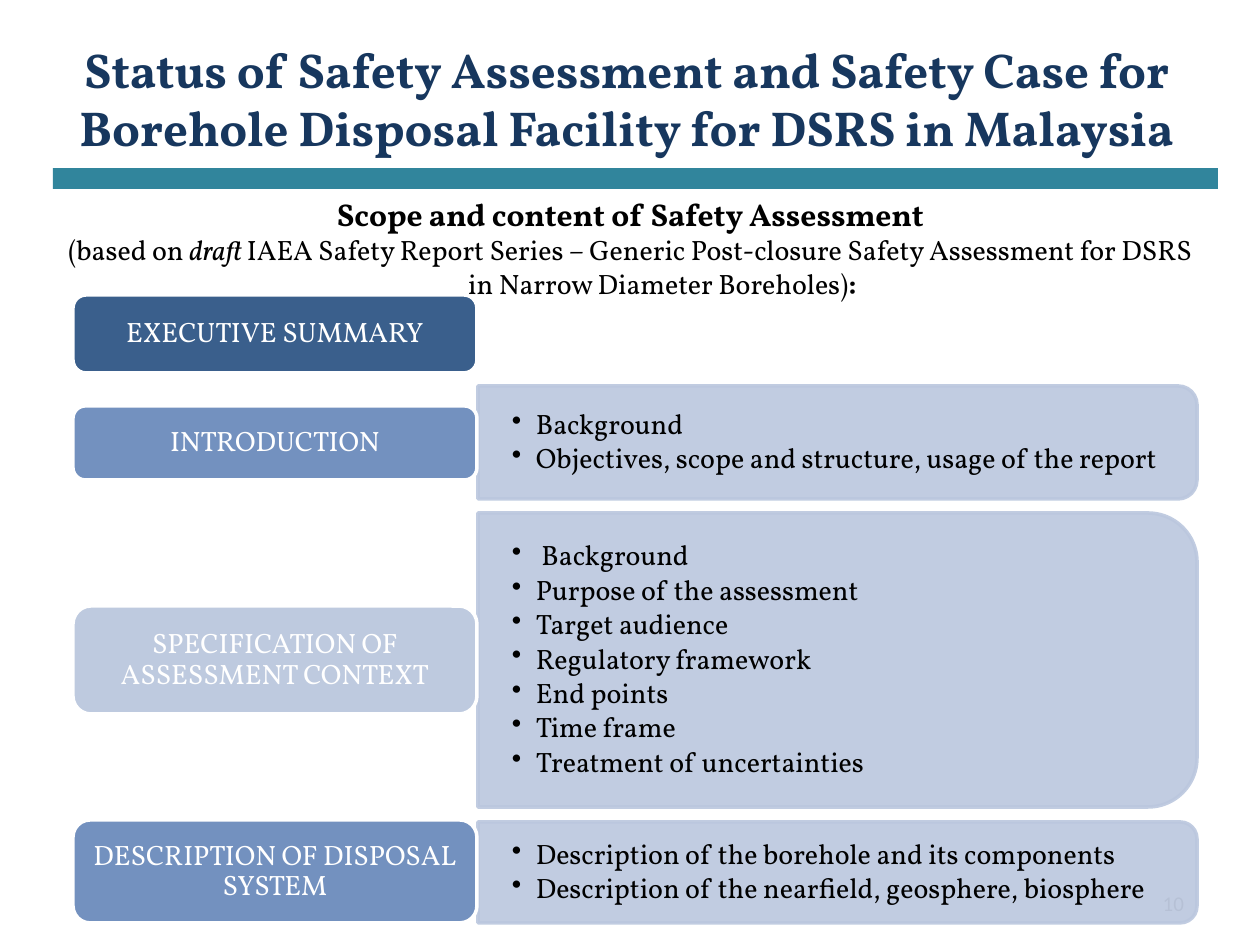
from lxml.etree import SubElement
from pptx import Presentation
from pptx.dml.color import RGBColor
from pptx.enum.shapes import MSO_SHAPE as Shape
from pptx.enum.text import MSO_ANCHOR as Anchor, MSO_AUTO_SIZE as AutoSize, PP_ALIGN as Align
from pptx.oxml.ns import qn
from pptx.util import Pt

EMU_PER_PX = 914400 / 126
FONT = "Vollkorn"

NAVY = RGBColor(0x17, 0x37, 0x5E)
TEAL = RGBColor(0x31, 0x85, 0x9C)
BLACK = RGBColor(0x00, 0x00, 0x00)
WHITE = RGBColor(0xFF, 0xFF, 0xFF)
GREY = RGBColor(0x89, 0x89, 0x89)
DARK_BLUE = RGBColor(0x3A, 0x5F, 0x8C)
MID_BLUE = RGBColor(0x73, 0x91, 0xBF)
PALE_BLUE = RGBColor(0xBE, 0xCA, 0xDF)
PANEL_BLUE = RGBColor(0xBB, 0xC7, 0xDE)

LABEL_LEFT, LABEL_WIDTH = 73, 404
PANEL_LEFT, PANEL_WIDTH = 478, 719

# Label, colour, (label top, height), (panel top, height), bullets
SECTIONS = [
    ("EXECUTIVE SUMMARY", DARK_BLUE, (295, 78), None, []),
    ("INTRODUCTION", MID_BLUE, (406, 74), (386, 113), [
        "Background",
        "Objectives, scope and structure, usage of the report",
    ]),
    ("SPECIFICATION OF ASSESSMENT CONTEXT", PALE_BLUE, (606, 108), (513, 294), [
        " Background",
        "Purpose of the assessment",
        "Target audience",
        "Regulatory framework",
        "End points",
        "Time frame",
        "Treatment of uncertainties",
    ]),
    ("DESCRIPTION OF DISPOSAL SYSTEM", MID_BLUE, (820, 103), (822, 101), [
        "Description of the borehole and its components",
        "Description of the nearfield, geosphere, biosphere",
    ]),
]


def px(length):
    return round(length * EMU_PER_PX)


def place(box, left, top, width, height):
    box.left, box.top, box.width, box.height = map(px, (left, top, width, height))


def add_span(para, text, size, color, bold=False, italic=False, font=FONT):
    span = para.add_run()
    span.text = text
    span.font.size = Pt(size)
    span.font.color.rgb = color
    span.font.bold = bold
    span.font.italic = italic
    if font:
        span.font.name = font


def set_indent(para, indent):
    props = para._p.get_or_add_pPr()
    props.set("marL", str(px(indent)))
    props.set("indent", str(-px(indent)))
    return props


def set_frame(box, anchor, side=0, edge=0):
    frame = box.text_frame
    frame.word_wrap = True
    frame.auto_size = AutoSize.NONE
    frame.vertical_anchor = anchor
    frame.margin_left = frame.margin_right = px(side)
    frame.margin_top = frame.margin_bottom = px(edge)
    return frame


def add_block(slide, kind, bounds, fill, line=None):
    block = slide.shapes.add_shape(kind, *map(px, bounds))
    block.shadow.inherit = False
    block.fill.solid()
    block.fill.fore_color.rgb = fill
    if line is None:
        block.line.fill.background()
    else:
        block.line.color.rgb = line
        block.line.width = Pt(2)
    return block


def add_title(slide):
    title = slide.shapes.title
    place(title, 35, 39, 1183, 118)
    para = set_frame(title, Anchor.MIDDLE, 13, 6).paragraphs[0]
    para.alignment = Align.CENTER
    add_span(para, "Status of Safety Assessment and Safety Case for "
             "Borehole Disposal Facility for DSRS in Malaysia", 28, NAVY, bold=True)


def add_scope(slide):
    body = slide.placeholders[1]
    place(body, 53, 189, 1155, 391)
    frame = set_frame(body, Anchor.TOP, 13, 6)
    heading, source = frame.paragraphs[0], frame.add_paragraph()
    for para in (heading, source):
        para.alignment = Align.CENTER
        para.space_before = Pt(0)
        SubElement(set_indent(para, 64), qn("a:buNone"))
    add_span(heading, "Scope and content of Safety Assessment", 18, BLACK, bold=True)
    add_span(source, "(based on ", 16, BLACK)
    add_span(source, "draft ", 16, BLACK, italic=True)
    add_span(source, "IAEA Safety Report Series – Generic Post-closure Safety "
             "Assessment for DSRS in Narrow Diameter Boreholes)", 16, BLACK)
    add_span(source, ":", 16, BLACK, bold=True)


def add_page_number(slide):
    box = slide.shapes.add_textbox(*map(px, (1117, 880, 80, 46)))
    para = set_frame(box, Anchor.MIDDLE, 13, 6).paragraphs[0]
    para.alignment = Align.RIGHT
    add_span(para, "10", 12, GREY, font=None)


def add_panel(slide, top, height, bullets):
    # A shape turned by 90° keeps its centre, with width and height swapped
    shift = (PANEL_WIDTH - height) / 2
    panel = add_block(slide, Shape.ROUND_2_SAME_RECTANGLE,
                      (PANEL_LEFT + shift, top - shift, height, PANEL_WIDTH),
                      PANEL_BLUE, PANEL_BLUE)
    panel.rotation = 90
    for color in panel._element.spPr.iter(qn("a:srgbClr")):
        SubElement(color, qn("a:alpha"), val="90000")

    box = slide.shapes.add_textbox(*map(px, (PANEL_LEFT, top, PANEL_WIDTH, height)))
    frame = set_frame(box, Anchor.MIDDLE, 34, 12)
    for index, text in enumerate(bullets):
        para = frame.add_paragraph() if index else frame.paragraphs[0]
        para.level = 1
        para.alignment = Align.JUSTIFY
        para.line_spacing = 0.9
        para.space_after = Pt(2.4)
        SubElement(set_indent(para, 24), qn("a:buChar"), char="•")
        add_span(para, text, 16, BLACK)


def add_label(slide, text, color, top, height):
    label = add_block(slide, Shape.ROUNDED_RECTANGLE,
                      (LABEL_LEFT, top, LABEL_WIDTH, height), color, WHITE)
    para = set_frame(label, Anchor.MIDDLE, 9, 4).paragraphs[0]
    para.alignment = Align.CENTER
    para.line_spacing = 0.9
    add_span(para, text, 16, WHITE)


def main():
    deck = Presentation()
    deck.slide_width, deck.slide_height = px(1260), px(945)
    slide = deck.slides.add_slide(deck.slide_layouts[1])

    # Heading
    add_title(slide)
    add_scope(slide)
    add_block(slide, Shape.RECTANGLE, (53, 168, 1165, 21), TEAL)
    add_page_number(slide)

    # Report sections, each label over its panel
    for text, color, label_span, panel_span, bullets in SECTIONS:
        if panel_span:
            add_panel(slide, *panel_span, bullets)
        add_label(slide, text, color, *label_span)

    deck.save("out.pptx")


if __name__ == "__main__":
    main()
